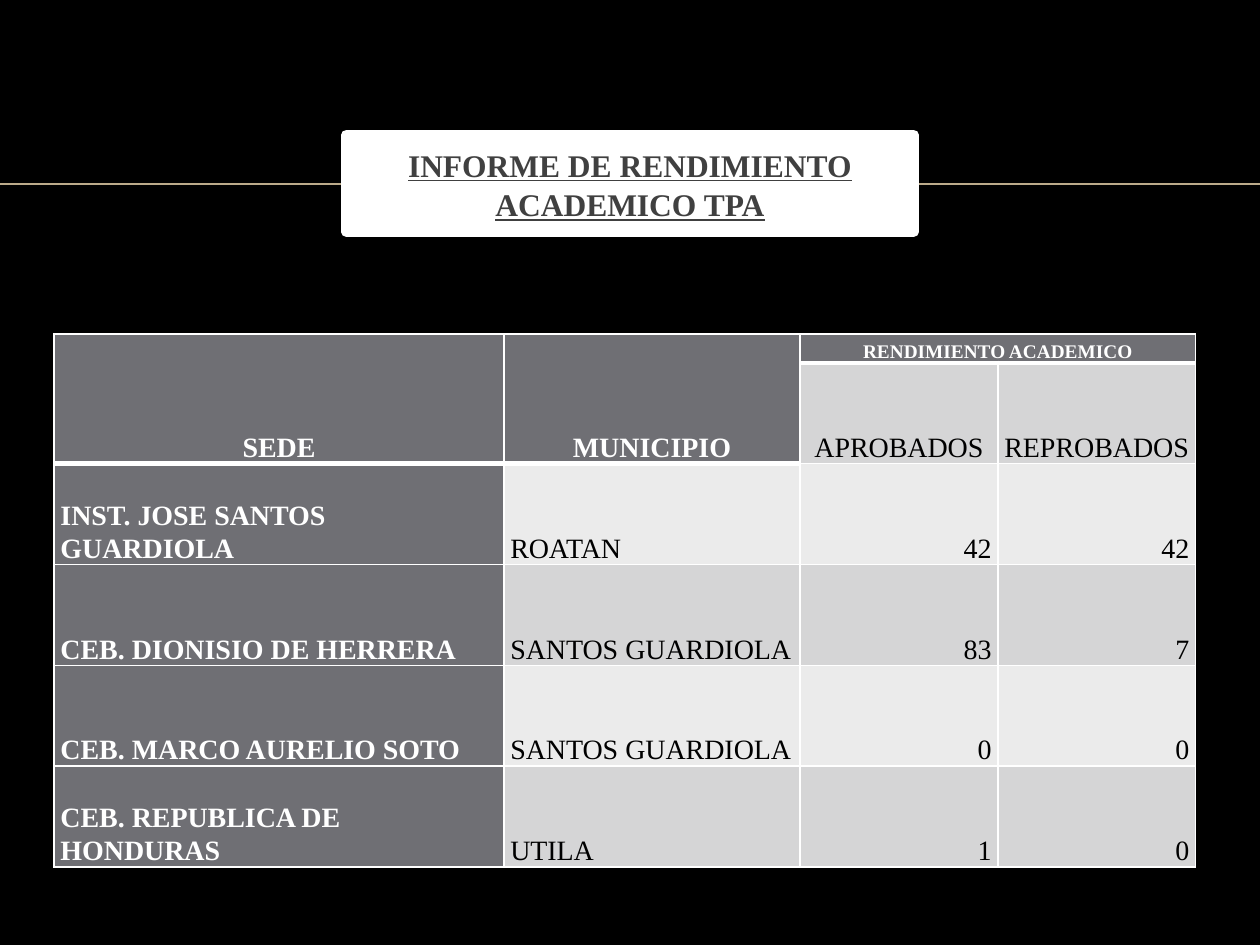
from lxml.etree import SubElement
from pptx import Presentation
from pptx.dml.color import RGBColor
from pptx.enum.shapes import MSO_CONNECTOR
from pptx.enum.text import MSO_ANCHOR, PP_ALIGN
from pptx.oxml.ns import qn
from pptx.util import Inches, Pt

COLORS = {
    "background": "000000", "rule": "BBAA8A", "white": "FFFFFF", "title": "404040",
    "header": "6F6F74", "dark_band": "D5D5D6", "light_band": "EBEBEB", "black": "000000",
}
RGB = {name: RGBColor.from_string(value) for name, value in COLORS.items()}


def write(tf, text, size=16, color="black", bold=False, underline=False,
          align=PP_ALIGN.LEFT, spacing=1.07, before=0):
    p = tf.paragraphs[0]
    p.alignment, p.line_spacing, p.space_before = align, spacing, Pt(before)
    r = p.add_run()
    r.text = text
    r.font.name, r.font.size = "Times New Roman", Pt(size)
    r.font.bold, r.font.underline = bold, underline
    r.font.color.rgb = RGB[color]


def set_borders(cell, top, bottom):
    """Draw white cell edges, with the top and bottom widths in points."""
    tcPr = cell._tc.get_or_add_tcPr()
    for tag, width in (("a:lnL", 1), ("a:lnR", 1), ("a:lnT", top), ("a:lnB", bottom)):
        ln = SubElement(tcPr, qn(tag), w=str(Pt(width)))
        fill = SubElement(ln, qn("a:solidFill"))
        SubElement(fill, qn("a:srgbClr"), val=COLORS["white"])


prs = Presentation()
prs.slide_width, prs.slide_height = Inches(10), Inches(7.5)
s = prs.slides.add_slide(prs.slide_layouts[5])
s.background.fill.solid()
s.background.fill.fore_color.rgb = RGB["background"]

# Rule behind the title
rule = s.shapes.add_connector(MSO_CONNECTOR.STRAIGHT, 0, Inches(1.46), Inches(10), Inches(1.46))
rule.line.color.rgb = RGB["rule"]
rule.line.width = Pt(1)
SubElement(rule._element.spPr, qn("a:effectLst"))

# Results table
rows = [
    ["SEDE", "MUNICIPIO", "RENDIMIENTO ACADEMICO", ""],
    ["", "", "APROBADOS", "REPROBADOS"],
    ["INST. JOSE SANTOS GUARDIOLA", "ROATAN", "42", "42"],
    ["CEB. DIONISIO DE HERRERA", "SANTOS GUARDIOLA", "83", "7"],
    ["CEB. MARCO AURELIO SOTO", "SANTOS GUARDIOLA", "0", "0"],
    ["CEB. REPUBLICA DE HONDURAS", "UTILA", "1", "0"],
]
col_widths = [3.57, 2.35, 1.57, 1.57]
row_heights = [0.23] + [0.8] * 5
table = s.shapes.add_table(len(rows), len(col_widths), Inches(0.43), Inches(2.65),
                           Inches(sum(col_widths)), Inches(sum(row_heights))).table
for column, width in zip(table.columns, col_widths):
    column.width = Inches(width)
for row, height in zip(table.rows, row_heights):
    row.height = Inches(height)
for first, last in (((0, 0), (1, 0)), ((0, 1), (1, 1)), ((0, 2), (0, 3))):
    table.cell(*first).merge(table.cell(*last))

for i, texts in enumerate(rows):
    for j, text in enumerate(texts):
        cell = table.cell(i, j)
        cell.margin_left = cell.margin_right = Inches(0.05)
        cell.margin_top = cell.margin_bottom = 0
        cell.vertical_anchor = MSO_ANCHOR.BOTTOM

        # The heading ends one row lower in the first two columns
        last_heading_row = 1 if j < 2 else 0
        set_borders(cell, top=3 if i == last_heading_row + 1 else 1,
                    bottom=3 if i in (0, last_heading_row) else 1)
        is_header = i == 0 or j == 0 or i <= last_heading_row
        band = "dark_band" if i % 2 else "light_band"
        cell.fill.solid()
        cell.fill.fore_color.rgb = RGB["header" if is_header else band]

        if text:
            align = PP_ALIGN.CENTER if i < 2 else PP_ALIGN.RIGHT if j > 1 else PP_ALIGN.LEFT
            write(cell.text_frame, text, size=11 if (i, j) == (0, 2) else 16,
                  color="white" if is_header else "black", bold=is_header, align=align)

# Title, in front of the rule
title = s.shapes.title
title.left, title.top, title.width, title.height = map(Inches, (2.75, 1.07, 4.5, 0.77))
title.fill.solid()
title.fill.fore_color.rgb = RGB["white"]
title.line.color.rgb = RGB["white"]
title.line.width = Pt(6)
tf = title.text_frame
tf.word_wrap = True
tf.vertical_anchor = MSO_ANCHOR.MIDDLE
write(tf, "INFORME DE RENDIMIENTO ACADEMICO TPA", size=18, color="title", bold=True,
      underline=True, align=PP_ALIGN.CENTER, spacing=1.05, before=4)
title.element.getparent().append(title.element)

prs.save("out.pptx")
